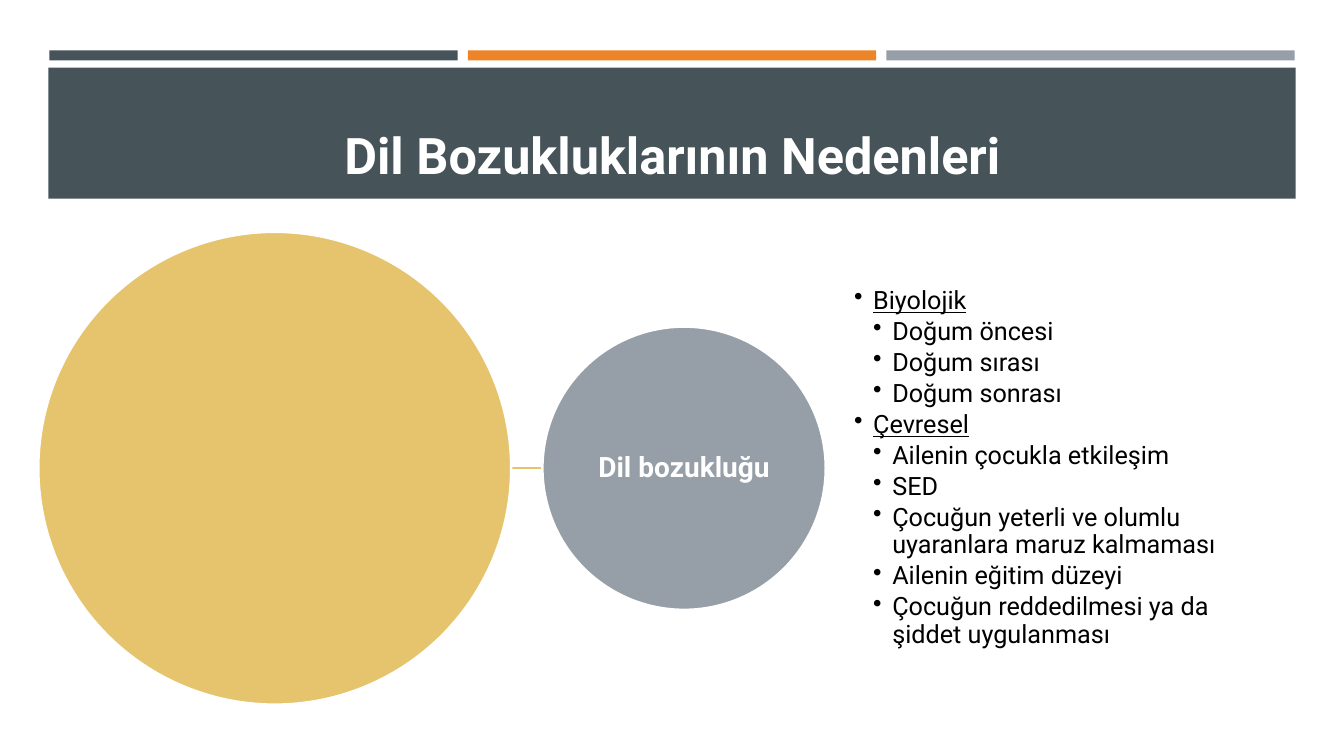
import pptx
import pptx.util
import pptx.dml.color
import pptx.enum.shapes
import pptx.enum.text
import pptx.oxml.ns
import lxml.etree
from dataclasses import dataclass

Inches, Pt = pptx.util.Inches, pptx.util.Pt
SHAPE = pptx.enum.shapes.MSO_SHAPE
ALIGN = pptx.enum.text.PP_ALIGN
ANCHOR = pptx.enum.text.MSO_ANCHOR

# Content
TITLE = "Dil Bozukluklarının Nedenleri"
CENTRE_LABEL = "Dil bozukluğu"
CAUSES = [
    ("Biyolojik", ["Doğum öncesi", "Doğum sırası", "Doğum sonrası"]),
    ("Çevresel", [
        "Ailenin çocukla etkileşim",
        "SED",
        "Çocuğun yeterli ve olumlu uyaranlara maruz kalmaması",
        "Ailenin eğitim düzeyi",
        "Çocuğun reddedilmesi ya da şiddet uygulanması",
    ]),
]


@dataclass(frozen=True)
class Theme:
    font: str = "Roboto"
    dark: str = "465359"
    orange: str = "ED8428"
    grey: str = "969FA7"
    yellow: str = "E6C46D"
    white: str = "FFFFFF"
    black: str = "000000"
    title_size: float = 36
    label_size: float = 20
    list_size: float = 18
    line_width: float = 1.75


THEME = Theme()


def color(value):
    return pptx.dml.color.RGBColor.from_string(value)


def add_filled(slide, kind, box, fill, outline=None):
    shape = slide.shapes.add_shape(kind, *map(Inches, box))
    shape.shadow.inherit = False
    shape.fill.solid()
    shape.fill.fore_color.rgb = color(fill)
    if outline:
        shape.line.color.rgb = color(outline)
        shape.line.width = Pt(THEME.line_width)
    else:
        shape.line.fill.background()
    return shape


def set_frame(frame, anchor, inset=None):
    frame.word_wrap = True
    frame.auto_size = pptx.enum.text.MSO_AUTO_SIZE.NONE
    frame.vertical_anchor = anchor
    if inset is not None:
        frame.margin_left = frame.margin_right = Inches(inset)
        frame.margin_top = frame.margin_bottom = Inches(inset)


def add_run(paragraph, text, size, text_color, bold=False, underline=False):
    run = paragraph.add_run()
    run.text = text
    run.font.name = THEME.font
    run.font.size = Pt(size)
    run.font.color.rgb = color(text_color)
    run.font.bold = bold
    run.font.underline = underline


def add_bullet(paragraph, level):
    step = Inches(0.19)
    paragraph.level = level
    properties = paragraph._p.get_or_add_pPr()
    properties.set("marL", str(step * (level + 1)))
    properties.set("indent", str(-step))
    bullet = lxml.etree.SubElement(properties, pptx.oxml.ns.qn("a:buChar"))
    bullet.set("char", "•")


def add_header(slide):
    # Three bars above the title band
    bar_width, gap = 4.05, 0.1
    for index, fill in enumerate((THEME.dark, THEME.orange, THEME.grey)):
        left = 0.49 + index * (bar_width + gap)
        add_filled(slide, SHAPE.RECTANGLE, (left, 0.5, bar_width, 0.1), fill)
    add_filled(slide, SHAPE.RECTANGLE, (0.48, 0.67, 12.37, 1.3), THEME.dark)

    # Title, brought in front of the band
    title = slide.shapes.title
    title.left, title.top = Inches(0.64), Inches(0.77)
    title.width, title.height = Inches(12.06), Inches(1.11)
    title.element.getparent().append(title.element)
    set_frame(title.text_frame, ANCHOR.BOTTOM)
    paragraph = title.text_frame.paragraphs[0]
    paragraph.alignment = ALIGN.CENTER
    add_run(paragraph, TITLE, THEME.title_size, THEME.white, bold=True)


def add_diagram(slide):
    middle = 4.645
    large, small = 4.69, 2.81
    small_left = 5.38

    # Link between the circles
    link = slide.shapes.add_connector(
        pptx.enum.shapes.MSO_CONNECTOR.STRAIGHT,
        Inches(4.37), Inches(middle), Inches(small_left), Inches(middle))
    link.line.color.rgb = color(THEME.yellow)
    link.line.width = Pt(THEME.line_width)
    lxml.etree.SubElement(link.element.spPr, pptx.oxml.ns.qn("a:effectLst"))

    # Circles
    add_filled(slide, SHAPE.OVAL, (0.38, middle - large / 2, large, large),
               THEME.yellow, THEME.white)
    circle = add_filled(slide, SHAPE.OVAL,
                        (small_left, middle - small / 2, small, small),
                        THEME.grey, THEME.white)
    set_frame(circle.text_frame, ANCHOR.MIDDLE, 0.01)
    paragraph = circle.text_frame.paragraphs[0]
    paragraph.alignment = ALIGN.CENTER
    paragraph.line_spacing = 0.9
    add_run(paragraph, CENTRE_LABEL, THEME.label_size, THEME.white, bold=True)

    # List of causes
    causes = slide.shapes.add_textbox(
        Inches(8.47), Inches(middle - small / 2), Inches(4.22), Inches(small))
    frame = causes.text_frame
    set_frame(frame, ANCHOR.MIDDLE, 0)
    lines = [(level, text) for heading, items in CAUSES
             for level, text in [(0, heading)] + [(1, item) for item in items]]
    for index, (level, text) in enumerate(lines):
        paragraph = frame.add_paragraph() if index else frame.paragraphs[0]
        paragraph.line_spacing = 0.9
        paragraph.space_after = Pt(0.15 * THEME.list_size)
        add_bullet(paragraph, level)
        add_run(paragraph, text, THEME.list_size, THEME.black,
                underline=level == 0)


def main():
    presentation = pptx.Presentation()
    presentation.slide_width = Inches(13.33)
    presentation.slide_height = Inches(7.5)
    slide = presentation.slides.add_slide(presentation.slide_layouts[5])
    add_header(slide)
    add_diagram(slide)
    presentation.save("out.pptx")


if __name__ == "__main__":
    main()
